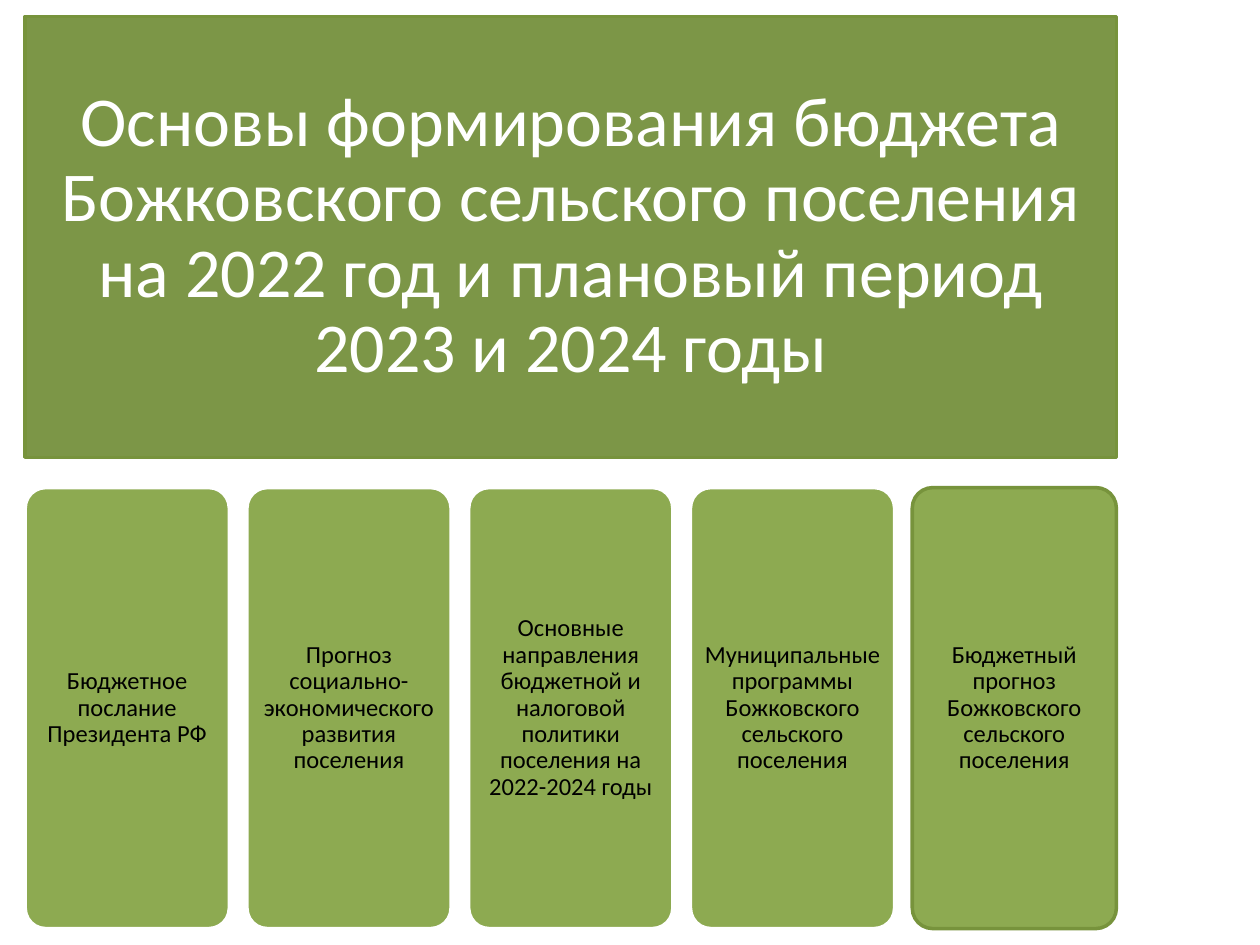
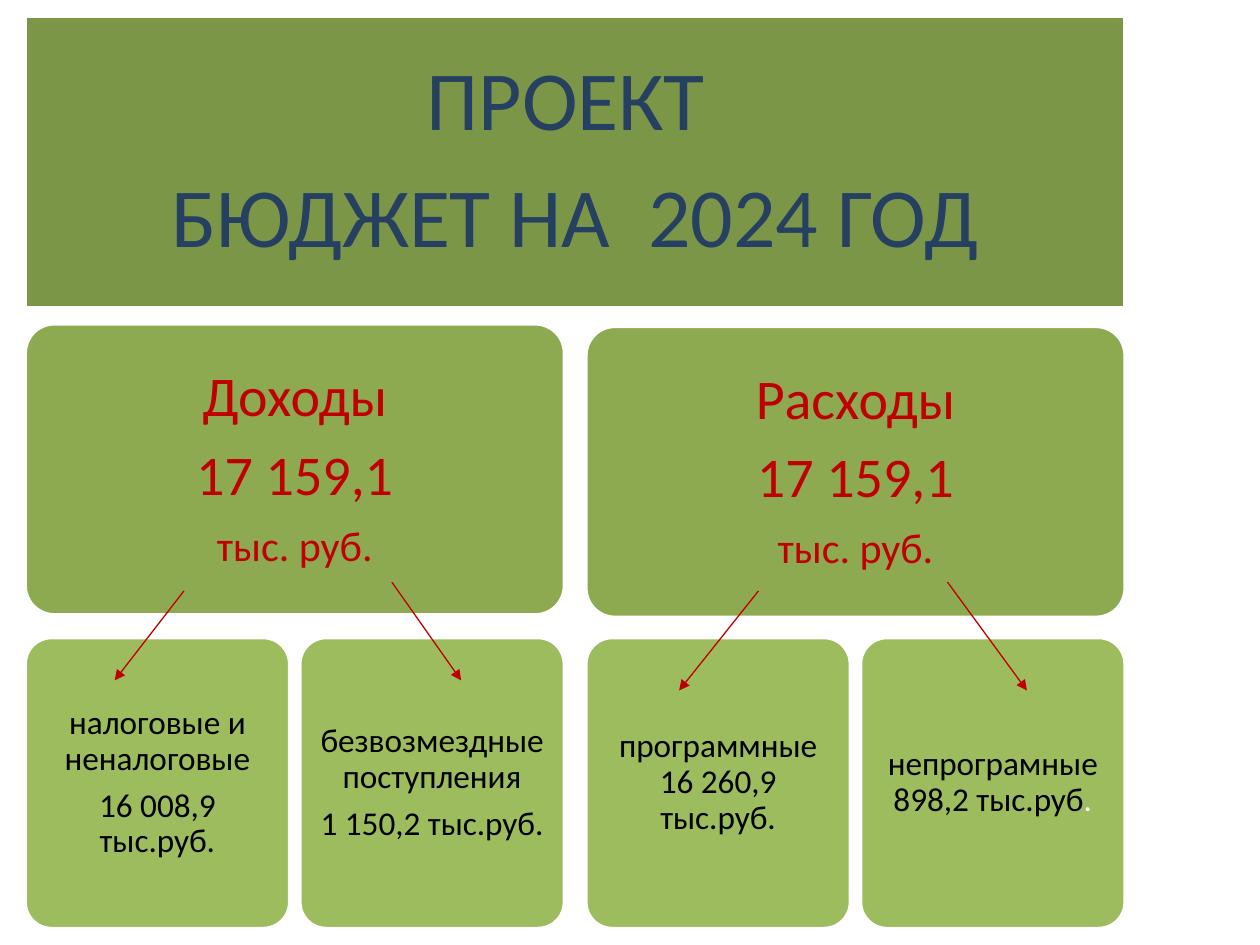
from lxml.etree import SubElement
from pptx import Presentation
from pptx.dml.color import RGBColor
from pptx.enum.shapes import MSO_CONNECTOR as Connector, MSO_SHAPE as Shape
from pptx.enum.text import MSO_ANCHOR as Anchor, MSO_AUTO_SIZE as AutoSize, PP_ALIGN as Align
from pptx.oxml.ns import qn
from pptx.util import Inches, Pt

FONT = "Calibri"
WHITE, BLACK, NAVY, RED = "FFFFFF", "000000", "254061", "C00000"
DARK_GREEN, GREEN, LIGHT_GREEN, EDGE_GREEN = "7C9647", "8DAA51", "9CBC5D", "77933C"
LEFT, TOP, BOTTOM = 0.2, 0.13, 7.37
SPACE_AFTER = 0.32  # share of the text size


def color(hex_value):
    return RGBColor.from_string(hex_value)


def add_box(slide, text, at, fill, size, font_color, inset, line=WHITE, is_title=False):
    """Rounded box with centred text; a title box uses the title placeholder."""
    left, top, width, height = map(Inches, at)
    if is_title:
        box = slide.shapes.title
        box.left, box.top, box.width, box.height = left, top, width, height
        SubElement(box._element.spPr, qn("a:prstGeom"), prst="roundRect")
    else:
        box = slide.shapes.add_shape(Shape.ROUNDED_RECTANGLE, left, top, width, height)
    box.adjustments[0] = 0.1
    box.fill.solid()
    box.fill.fore_color.rgb = color(fill)
    box.line.color.rgb = color(line)
    box.line.width = Pt(2)
    box.shadow.inherit = False

    frame = box.text_frame
    frame.text = text
    frame.word_wrap = True
    frame.auto_size = AutoSize.NONE
    frame.vertical_anchor = Anchor.MIDDLE
    frame.margin_left = frame.margin_right = Inches(inset)
    frame.margin_top = frame.margin_bottom = Inches(inset)
    for para in frame.paragraphs:
        para.alignment = Align.CENTER
        para.line_spacing = 0.9
        para.space_before = Pt(0)
        para.space_after = Pt(size * SPACE_AFTER)
        for span in para.runs:
            span.font.name = FONT
            span.font.size = Pt(size)
            span.font.color.rgb = color(font_color)
    return box


deck = Presentation()
deck.slide_width, deck.slide_height = Inches(10), Inches(7.5)
title_only = deck.slide_layouts[5]

# Slide 1: what the budget is based on
basis_page = deck.slides.add_slide(title_only)
add_box(basis_page,
        "Основы формирования бюджета Божковского сельского поселения "
        "на 2022 год и плановый период 2023 и 2024 годы",
        (LEFT, TOP, 8.66, 3.5), DARK_GREEN, 40, WHITE, 0.17, line=EDGE_GREEN, is_title=True)

foundations = [
    "Бюджетное послание Президента РФ",
    "Прогноз социально-экономического развития поселения",
    "Основные направления бюджетной и налоговой политики поселения на 2022-2024 годы",
    "Муниципальные программы Божковского сельского поселения",
    "Бюджетный прогноз Божковского сельского поселения",
]
column_width, column_gap, column_height = 1.62, 0.14, 3.5
for index, foundation in enumerate(foundations):
    is_last = index == len(foundations) - 1
    add_box(basis_page, foundation,
            (LEFT + index * (column_width + column_gap), BOTTOM - column_height,
             column_width, column_height),
            GREEN, 14, BLACK, 0.06, line=EDGE_GREEN if is_last else WHITE)

# Slide 2: income and spending
budget_page = deck.slides.add_slide(title_only)
row_height, total_width, part_width, part_pitch = 2.31, 4.28, 2.1, 2.18
add_box(budget_page, "ПРОЕКТ \nБЮДЖЕТ НА  2024 ГОД",
        (LEFT, TOP, 8.73, row_height), DARK_GREEN, 48, NAVY, 0.2, is_title=True)

branches = [
    ("Доходы", LEFT, 2.57,
     ["налоговые и неналоговые\n16 008,9 тыс.руб.",
      "безвозмездные поступления\n1 150,2 тыс.руб."]),
    ("Расходы", 4.65, 2.59,
     ["программные 16 260,9 тыс.руб.", "непрограмные 898,2 тыс.руб"]),
]
for name, left, top, parts in branches:
    total_box = add_box(budget_page, f"{name}\n17 159,1\nтыс. руб.",
                        (left, top, total_width, row_height), GREEN, 32, RED, 0.13)
    unit = total_box.text_frame.paragraphs[-1]
    unit.space_after = Pt(24 * SPACE_AFTER)
    unit.runs[0].font.size = Pt(24)
    for index, part in enumerate(parts):
        part_box = add_box(budget_page, part,
                           (left + index * part_pitch, BOTTOM - row_height,
                            part_width, row_height),
                           LIGHT_GREEN, 19, BLACK, 0.08)

# The last part ends with a white full stop
full_stop = part_box.text_frame.paragraphs[0].add_run()
full_stop.text = "."
full_stop.font.name = FONT
full_stop.font.size = Pt(19)
full_stop.font.color.rgb = color(WHITE)

arrows = [
    (1.46, 4.69, 0.91, 5.4),
    (3.11, 4.62, 3.66, 5.4),
    (6.02, 4.69, 5.39, 5.48),
    (7.52, 4.62, 8.15, 5.48),
]
for ends in arrows:
    arrow = budget_page.shapes.add_connector(Connector.STRAIGHT, *map(Inches, ends))
    arrow.line.color.rgb = color(RED)
    arrow.line.width = Pt(0.75)
    SubElement(arrow.line._get_or_add_ln(), qn("a:tailEnd"), type="triangle")
    SubElement(arrow._element.spPr, qn("a:effectLst"))

deck.save("out.pptx")
